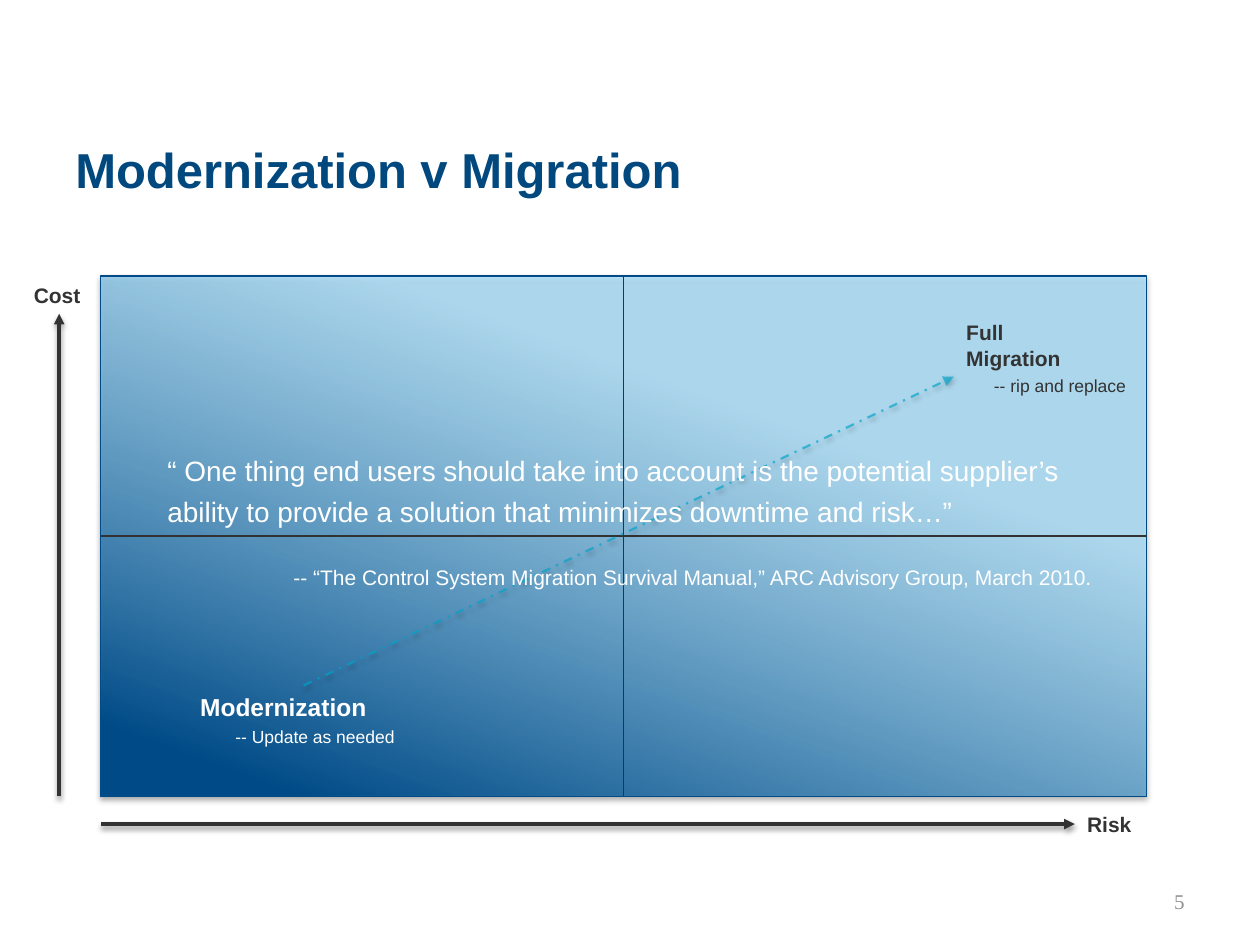
from lxml.etree import SubElement
from pptx import Presentation
from pptx.dml.color import RGBColor
from pptx.enum.dml import MSO_LINE_DASH_STYLE as Dash
from pptx.enum.shapes import MSO_CONNECTOR as Connector, MSO_SHAPE as Shape
from pptx.enum.text import MSO_ANCHOR as Anchor, PP_ALIGN as Align
from pptx.oxml.ns import qn
from pptx.util import Inches, Pt

NAVY, LIGHT, TEAL = "004B87", "A3E0FF", "00A4C8"
DARK, RULE, WHITE = "333333", "323232", "FFFFFF"


def color(value):
    return RGBColor.from_string(value)


def set_alpha(parent, percent):
    for element in parent.iter(qn("a:srgbClr")):
        SubElement(element, qn("a:alpha"), val=str(percent * 1000))


def set_effects(shape, opacity=None, distance=1.6):
    effects = SubElement(shape._element.spPr, qn("a:effectLst"))
    if opacity:
        shadow = SubElement(effects, qn("a:outerShdw"), blurRad=str(Pt(3.1)),
                            dist=str(Pt(distance)), dir="5400000", rotWithShape="0")
        SubElement(shadow, qn("a:srgbClr"), val="000000")
        set_alpha(shadow, opacity)


def format_text(paragraph, text, size=12, fill=DARK, bold=False, font="Arial",
                align=None, spacing=None, before=None, after=None, indent=0):
    paragraph.text = text
    paragraph.alignment = align
    paragraph.line_spacing = spacing
    paragraph.space_before = before
    paragraph.space_after = after
    if indent:
        paragraph._p.get_or_add_pPr().set("marL", str(Inches(indent)))
    paragraph.font.size = Pt(size)
    paragraph.font.name = font
    paragraph.font.bold = bold
    paragraph.font.color.rgb = color(fill)


def add_text(slide, box, text, anchor=Anchor.TOP, **style):
    frame = slide.shapes.add_textbox(*map(Inches, box)).text_frame
    frame.word_wrap = True
    frame.vertical_anchor = anchor
    format_text(frame.paragraphs[0], text, **style)
    return frame


def add_line(slide, start, end, fill=RULE, width=0.75, dash=None, arrow=False, opacity=None):
    line = slide.shapes.add_connector(Connector.STRAIGHT, *map(Inches, (*start, *end)))
    line.line.color.rgb = color(fill)
    line.line.width = Pt(width)
    if dash:
        line.line.dash_style = dash
    outline = line.line._get_or_add_ln()
    if opacity:
        set_alpha(outline, opacity)
    if arrow:
        SubElement(outline, qn("a:tailEnd"), type="triangle")
    set_effects(line, 38 if arrow else None)


def add_quadrants(slide, box):
    left, top, width, height = box
    panel = slide.shapes.add_shape(Shape.RECTANGLE, *map(Inches, box))
    panel.fill.gradient()
    panel.fill.gradient_angle = 70
    for stop, position, value in zip(panel.fill.gradient_stops, (0.08, 0.69), (NAVY, LIGHT)):
        stop.position = position
        stop.color.rgb = color(value)
    set_alpha(panel._element.spPr.findall(".//" + qn("a:gs"))[-1], 69)
    panel.line.color.rgb = color(NAVY)
    panel.line.width = Pt(0.75)
    set_effects(panel, 35, 1.8)

    middle, center = left + width / 2, top + height / 2
    add_line(slide, (middle, top), (middle, top + height))
    add_line(slide, (left, center), (left + width, center))


def add_axes(slide, box):
    left, top, width, height = box
    bottom, right = top + height, left + width
    axis = dict(fill=DARK, width=2, arrow=True)
    add_text(slide, (left - 0.63, top, 0.63, 0.3), "Cost", bold=True)
    add_line(slide, (left - 0.33, bottom), (left - 0.33, top + 0.3), **axis)
    add_text(slide, (right - 0.57, bottom + 0.07, 0.63, 0.3), "Risk", bold=True)
    add_line(slide, (left, bottom + 0.22), (right - 0.57, bottom + 0.22), **axis)


def add_path(slide, box):
    left, top, width, height = box
    right, bottom = left + width, top + height
    add_text(slide, (right, top - 0.5, 1.15, 0.5), "Full Migration", bold=True)
    add_text(slide, (left - 0.92, bottom, 1.86, 0.34), "Modernization",
             size=14, fill=WHITE, bold=True)
    add_line(slide, (left, bottom), (right, top), fill=TEAL, width=1.25,
             dash=Dash.DASH_DOT, arrow=True, opacity=65)
    add_text(slide, (right + 0.22, top - 0.06, 1.3, 0.27), "-- rip and replace", size=10)
    add_text(slide, (left - 0.64, bottom + 0.27, 1.91, 0.27), "-- Update as needed",
             size=10, fill=WHITE)


def add_quote(slide, box):
    style = dict(fill=WHITE, spacing=1.2, after=Pt(12))
    frame = add_text(
        slide, box,
        "“ One thing end users should take into account is the potential supplier’s "
        "ability to provide a solution that minimizes downtime and risk…”",
        size=16, **style)
    format_text(
        frame.add_paragraph(),
        "-- “The Control System Migration Survival Manual,” ARC Advisory Group, March 2010.",
        before=Pt(6), indent=1, **style)


def main():
    presentation = Presentation()
    presentation.slide_width = Inches(10)
    presentation.slide_height = Inches(7.5)
    slide = presentation.slides.add_slide(presentation.slide_layouts[6])
    matrix = (0.8, 2.19, 8.3, 4.13)

    add_text(slide, (0.5, 0.97, 9, 0.74), "Modernization v Migration",
             anchor=Anchor.MIDDLE, size=28, fill="00487D", bold=True)
    add_text(slide, (7.17, 6.95, 2.33, 0.4), "5", anchor=Anchor.MIDDLE,
             fill="909090", font="Times New Roman", align=Align.RIGHT)
    add_quadrants(slide, matrix)
    add_axes(slide, matrix)
    add_path(slide, (2.41, 2.99, 5.16, 2.45))
    add_quote(slide, (1.23, 3.5, 7.61, 1.46))
    presentation.save("out.pptx")


if __name__ == "__main__":
    main()
